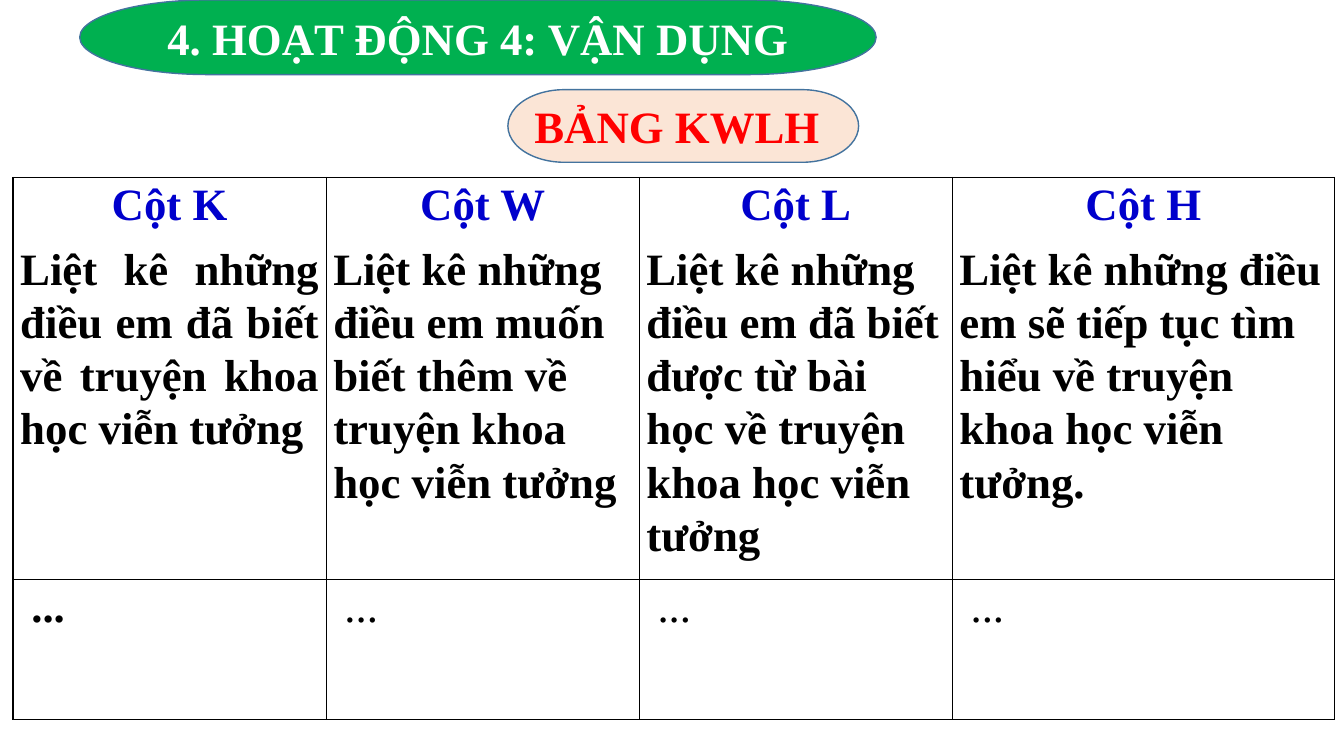
"""Build the KWLH table slide."""
from dataclasses import dataclass

from lxml import etree
from pptx import Presentation
from pptx.dml.color import RGBColor
from pptx.enum.shapes import MSO_SHAPE
from pptx.enum.text import MSO_ANCHOR, PP_ALIGN
from pptx.oxml.ns import qn
from pptx.util import Cm, Pt

TERMINATOR = MSO_SHAPE.FLOWCHART_TERMINATOR
LEFT, CENTER, JUSTIFY = PP_ALIGN.LEFT, PP_ALIGN.CENTER, PP_ALIGN.JUSTIFY
TOP, MIDDLE = MSO_ANCHOR.TOP, MSO_ANCHOR.MIDDLE

COLORS = {
    "green": "00B050",
    "peach": "FBE5D6",
    "outline": "43739E",
    "white": "FFFFFF",
    "red": "FF0000",
    "blue": "0000CC",
    "black": "000000",
}
FONT = {"name": "Times New Roman", "size": Pt(32), "bold": True}
CELL_SPACING = {"line_spacing": 1.07, "space_after": Pt(8)}
CELL_FORMAT = {
    "margin_left": Cm(0.18),
    "margin_right": Cm(0.18),
    "margin_top": 0,
    "margin_bottom": 0,
    "vertical_anchor": TOP,
}
ANSWER_INDENT = Cm(0.46)
ROW_HEIGHTS = (10.13, 3.53)


@dataclass
class Banner:
    """A rounded heading with its box in centimetres."""
    text: str
    left: float
    top: float
    width: float
    height: float
    fill: str
    color: str
    align: PP_ALIGN


@dataclass
class Column:
    """One KWLH column with its prompt and answer space."""
    title: str
    prompt: str
    width: float
    align: PP_ALIGN = LEFT
    bold_answer: bool = False


BANNERS = (
    Banner("BẢNG KWLH", 12.8, 2.26, 8.84, 1.83, "peach", "red", LEFT),
    Banner("4. HOẠT ĐỘNG 4: VẬN DỤNG", 2.01, 0, 20.07, 1.88, "green", "white", CENTER),
)
COLUMNS = (
    Column("Cột K", "Liệt kê những điều em đã biết về truyện khoa học viễn tưởng",
           7.89, JUSTIFY, True),
    Column("Cột W", "Liệt kê những điều em muốn biết thêm về truyện khoa học viễn tưởng", 7.89),
    Column("Cột L", "Liệt kê những điều em đã biết được từ bài học về truyện khoa học viễn tưởng",
           7.89),
    Column("Cột H", "Liệt kê những điều em sẽ tiếp tục tìm hiểu về truyện khoa học viễn tưởng.",
           9.63),
)


def rgb(name: str) -> RGBColor:
    """Look up a named colour."""
    return RGBColor.from_string(COLORS[name])


def apply(target, values: dict) -> None:
    """Set every attribute in a dict of format values."""
    for name, value in values.items():
        setattr(target, name, value)


def write(p, text: str, color: str, align: PP_ALIGN, **font) -> None:
    """Put one formatted run in a paragraph."""
    p.alignment = align
    r = p.add_run()
    r.text = text
    apply(r.font, FONT | font)
    r.font.color.rgb = rgb(color)


def add_banner(s, banner: Banner) -> None:
    """Draw a rounded heading."""
    box = (banner.left, banner.top, banner.width, banner.height)
    sp = s.shapes.add_shape(TERMINATOR, *map(Cm, box))
    sp.shadow.inherit = False
    sp.fill.solid()
    sp.fill.fore_color.rgb = rgb(banner.fill)
    sp.line.color.rgb = rgb("outline")
    sp.line.width = Pt(1)
    tf = sp.text_frame
    tf.vertical_anchor = MIDDLE
    write(tf.paragraphs[0], banner.text, banner.color, banner.align)


def format_cell(cell) -> None:
    """Give a cell its margins, white fill and black borders."""
    apply(cell, CELL_FORMAT)
    cell.fill.solid()
    cell.fill.fore_color.rgb = rgb("white")
    tc_pr = cell._tc.get_or_add_tcPr()
    for i, side in enumerate("LRTB"):
        ln = etree.Element(qn(f"a:ln{side}"), w=str(Pt(1)))
        fill = etree.SubElement(ln, qn("a:solidFill"))
        etree.SubElement(fill, qn("a:srgbClr"), val=COLORS["black"])
        tc_pr.insert(i, ln)


def add_kwlh_table(s, columns: tuple[Column, ...]) -> None:
    """Draw the table of prompts and answer spaces."""
    width = sum(column.width for column in columns)
    box = (0.33, 4.47, width, sum(ROW_HEIGHTS))
    table = s.shapes.add_table(len(ROW_HEIGHTS), len(columns), *map(Cm, box)).table
    apply(table, {"first_row": False, "horz_banding": False})
    for row, height in zip(table.rows, ROW_HEIGHTS):
        row.height = Cm(height)
    for i, column in enumerate(columns):
        table.columns[i].width = Cm(column.width)
        prompt, answer = table.cell(0, i), table.cell(1, i)
        tf = prompt.text_frame
        write(tf.paragraphs[0], column.title, "blue", CENTER)
        write(tf.add_paragraph(), column.prompt, "black", column.align)
        write(answer.text_frame.paragraphs[0], "...", "black", JUSTIFY, bold=column.bold_answer)
        for cell in (prompt, answer):
            format_cell(cell)
            for p in cell.text_frame.paragraphs:
                apply(p, CELL_SPACING)
        answer.margin_left = ANSWER_INDENT


def main() -> None:
    """Build and save the slide."""
    prs = Presentation()
    apply(prs, {"slide_width": Cm(33.87), "slide_height": Cm(19.05)})
    s = prs.slides.add_slide(prs.slide_layouts[6])
    add_kwlh_table(s, COLUMNS)
    for banner in BANNERS:
        add_banner(s, banner)
    prs.save("out.pptx")


if __name__ == "__main__":
    main()
